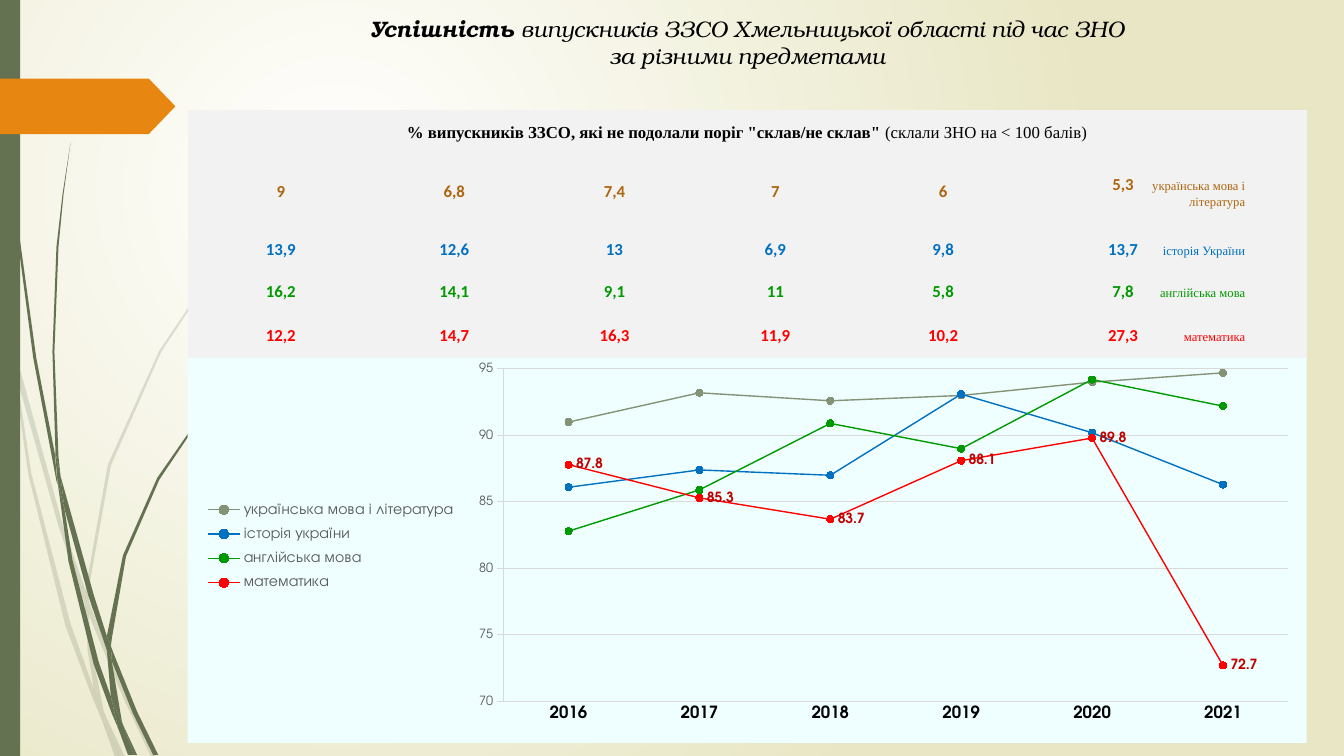
from lxml import etree
from pptx import Presentation
from pptx.chart.data import CategoryChartData
from pptx.dml.color import RGBColor
from pptx.enum.chart import XL_CHART_TYPE, XL_LABEL_POSITION, XL_LEGEND_POSITION, XL_MARKER_STYLE, XL_TICK_MARK
from pptx.enum.shapes import MSO_SHAPE
from pptx.enum.text import MSO_ANCHOR, PP_ALIGN
from pptx.oxml import parse_xml
from pptx.oxml.ns import nsdecls, qn
from pptx.util import Pt

PX = 9144
CENTER, LEFT = PP_ALIGN.CENTER, PP_ALIGN.LEFT
MIDDLE = MSO_ANCHOR.MIDDLE
RECT, ARROW = MSO_SHAPE.RECTANGLE, MSO_SHAPE.PENTAGON
DOT = XL_MARKER_STYLE.CIRCLE
HEX = {
    "white": "FFFFFF", "sand": "E8E6C4", "moss": "647252", "orange": "E78712",
    "black": "000000", "panel": "F2F2F2", "ice": "EFFFFF", "grid": "D9D9D9",
    "gray": "595959", "brown": "AD650E", "sage": "849276", "blue": "0070C0",
    "green": "009900", "red": "FF0000", "dark": "C00000",
}
SERIF, SANS, TITLE, BODY = "Times New Roman", "Calibri", "TeX Gyre Bonum", "TeX Gyre Adventor"


def style(font, color, size, name, bold=False):
    font.color.rgb = RGBColor.from_string(HEX[color])
    font.size, font.name, font.bold = Pt(size), name, bold


def place(owner, left, top, wide, high, inner=False):
    for old in owner.findall(qn("c:layout")):
        owner.remove(old)
    layout = etree.Element(qn("c:layout"))
    spot = owner.find(qn("c:legendPos"))
    if spot is None:
        owner.insert(0, layout)
    else:
        spot.addnext(layout)
    box = etree.SubElement(layout, qn("c:manualLayout"))
    if inner:
        etree.SubElement(box, qn("c:layoutTarget"), val="inner")
    for tag, val in (("xMode", "edge"), ("yMode", "edge"), ("x", left / 1110), ("y", top / 382),
                     ("w", wide / 1110), ("h", high / 382)):
        etree.SubElement(box, qn("c:" + tag), val=str(val))


deck = Presentation()
deck.slide_width, deck.slide_height = 1333 * PX, 750 * PX
slide = deck.slides.add_slide(deck.slide_layouts[6])
shapes = slide.shapes

back = slide.background.fill
back.gradient()
for stop, color in zip(back.gradient_stops, ("white", "sand")):
    stop.color.rgb = RGBColor.from_string(HEX[color])
grad = slide.element.find(".//" + qn("a:gradFill"))
grad.replace(grad.find(qn("a:lin")), parse_xml(
    f'<a:path {nsdecls("a")} path="circle">'
    '<a:fillToRect l="50000" t="50000" r="100000" b="100000"/></a:path>'))

pale = [
    [(11, 350), (9, 322), (0, 282), (0, 299), (10, 344)],
    [(58, 522), (84, 599), (85, 586), (62, 520), (14, 345), (17, 376)],
    [(92, 607), (88, 596), (88, 610), (123, 694), (150, 751), (155, 751), (127, 692)],
    [(119, 751), (124, 751), (105, 711)],
    [(93, 683), (70, 619), (31, 469), (17, 376), (11, 350), (28, 470), (65, 621), (92, 693), (101, 714), (99, 707)],
    [(84, 599), (87, 646), (93, 683), (96, 692), (105, 711), (103, 706), (91, 646), (88, 610), (88, 608)],
    [(88, 584), (110, 462), (160, 349), (229, 245), (268, 198), (290, 175), (312, 154), (312, 153), (289, 175),
     (268, 197), (228, 244), (158, 348), (107, 461), (85, 584), (85, 586), (88, 596)],
    [(101, 714), (114, 751), (119, 751)],
    [(88, 608), (88, 610), (88, 596), (85, 586), (84, 599)],
    [(96, 692), (93, 683), (99, 707), (101, 714), (119, 751), (105, 711)],
]
deep = [
    [(7, 110), (17, 233), (33, 355), (56, 477), (57, 481), (55, 457), (55, 453), (36, 355), (19, 232), (8, 109),
     (5, 48), (4, 0), (3, 0), (4, 48)],
    [(88, 592), (106, 645), (106, 633), (106, 631), (93, 590), (60, 472), (64, 505)],
    [(113, 649), (110, 641), (111, 656), (132, 708), (152, 749), (157, 749), (136, 706)],
    [(110, 691), (98, 657), (72, 556), (64, 505), (57, 477), (68, 557), (93, 659), (111, 708), (117, 722), (116, 717)],
    [(60, 472), (58, 453), (54, 349), (58, 245), (63, 193), (70, 141), (62, 193), (56, 245), (52, 349), (55, 449)],
    [(133, 749), (136, 749), (122, 719)],
    [(57, 477), (64, 505), (60, 472), (55, 449), (55, 453)],
    [(111, 633), (125, 552), (158, 476), (205, 406), (231, 374), (245, 359), (261, 344), (260, 344), (245, 358),
     (231, 373), (204, 405), (156, 474), (122, 551), (106, 631), (110, 641)],
    [(117, 722), (127, 749), (131, 749)],
    [(106, 645), (110, 691), (116, 706), (122, 719), (121, 716), (111, 656), (109, 651)],
    [(106, 645), (109, 651), (111, 656), (110, 641), (106, 631), (106, 633)],
    [(116, 706), (110, 691), (116, 717), (117, 722), (130, 749), (133, 749), (122, 719)],
]
forms = []
for alpha, stems in ((20, pale), (100, deep)):
    for pts in stems:
        pen = shapes.build_freeform(*pts[0], scale=PX)
        pen.add_line_segments(pts[1:], close=True)
        forms.append((pen.convert_to_shape(), "moss", alpha))
bar = shapes.add_shape(RECT, 0, 0, 20 * PX, 750 * PX)
arrow = shapes.add_shape(ARROW, 0, 78 * PX, 174 * PX, 55 * PX)
arrow.adjustments[0] = 0.48
forms += [(bar, "moss", 100), (arrow, "orange", 100)]
for form, color, alpha in forms:
    form.shadow.inherit = False
    form.line.fill.background()
    form.fill.solid()
    form.fill.fore_color.rgb = RGBColor.from_string(HEX[color])
    if alpha < 100:
        tint = form.element.spPr.find(".//" + qn("a:srgbClr"))
        etree.SubElement(tint, qn("a:alpha"), val=str(alpha * 1000))

frame = shapes.add_textbox(186 * PX, 10 * PX, 1110 * PX, 64 * PX).text_frame
frame.word_wrap = True
head, tail = frame.paragraphs[0], frame.add_paragraph()
head.add_run().text = "Успішність"
head.add_run().text = " випускників ЗЗСО Хмельницької області під час ЗНО"
tail.text = "за різними предметами"
for par in (head, tail):
    par.alignment = CENTER
    style(par.font, "black", 16, TITLE)
    par.font.italic = True
head.runs[0].font.bold = True

rows = [
    ("brown", ["9", "6,8", "7,4", "7", "6", "5,3"], ["українська мова і", "література"]),
    ("blue", ["13,9", "12,6", "13", "6,9", "9,8", "13,7"], ["історія України"]),
    ("green", ["16,2", "14,1", "9,1", "11", "5,8", "7,8"], ["англійська мова"]),
    ("red", ["12,2", "14,7", "16,3", "11,9", "10,2", "27,3"], ["математика"]),
]
table = shapes.add_table(5, 6, 186 * PX, 109 * PX, 1110 * PX, 246 * PX).table
table.first_row = table.horz_banding = False
table._tbl.tblPr.find(qn("a:tableStyleId")).text = "{2D5ABB26-0587-4C30-8999-92F81FD0307C}"
for col, width in zip(table.columns, (185, 159, 159, 160, 173, 274)):
    col.width = width * PX
for row, height in zip(table.rows, (44, 74, 40, 44, 44)):
    row.height = height * PX
for cell in table.iter_cells():
    cell.fill.solid()
    cell.fill.fore_color.rgb = RGBColor.from_string(HEX["panel"])
    cell.vertical_anchor = MIDDLE
    cell.margin_left = cell.margin_right = cell.margin_top = PX
    cell.margin_bottom = 0

table.cell(0, 0).merge(table.cell(0, 5))
par = table.cell(0, 0).text_frame.paragraphs[0]
par.alignment = CENTER
style(par.font, "black", 12, SERIF)
par.add_run().text = '% випускників ЗЗСО, які не подолали поріг "склав/не склав" '
par.add_run().text = "(склали ЗНО на ˂ 100 балів)"
par.runs[0].font.bold = True

for r, (color, vals, names) in enumerate(rows, 1):
    for c, val in enumerate(vals[:5]):
        par = table.cell(r, c).text_frame.paragraphs[0]
        par.text, par.alignment = val, CENTER
        style(par.font, color, 12, SANS, True)
    frame = table.cell(r, 5).text_frame
    for i, name in enumerate(names):
        par = frame.add_paragraph() if i else frame.paragraphs[0]
        par.alignment = LEFT
        if i == 0:
            run = par.add_run()
            run.text = "\t" + vals[5]
            style(run.font, color, 12, SANS, True)
        run = par.add_run()
        run.text = "\t\t" + name if i else "\t" + name
        style(run.font, color, 9, SERIF)
        tabs = etree.SubElement(par._p.get_or_add_pPr(), qn("a:tabLst"))
        for spot, side in ((91, "ctr"), (212, "r")):
            etree.SubElement(tabs, qn("a:tab"), pos=str(spot * PX), algn=side)

lines = [
    ("українська мова і література", "sage", (91, 93.2, 92.6, 93, 94, 94.7)),
    ("історія україни", "blue", (86.1, 87.4, 87, 93.1, 90.2, 86.3)),
    ("англійська мова", "green", (82.8, 85.9, 90.9, 89, 94.2, 92.2)),
    ("математика", "red", (87.8, 85.3, 83.7, 88.1, 89.8, 72.7)),
]
data = CategoryChartData()
data.categories = [str(year) for year in range(2016, 2022)]
for name, color, vals in lines:
    data.add_series(name, vals)
chart = shapes.add_chart(XL_CHART_TYPE.LINE_MARKERS, 186 * PX, 355 * PX, 1110 * PX, 382 * PX, data).chart
chart.has_title = False
style(chart.font, "black", 10, BODY)
chart.has_legend = True
chart.legend.position = XL_LEGEND_POSITION.LEFT
chart.legend.include_in_layout = False
style(chart.legend.font, "gray", 11, BODY)

years, marks = chart.category_axis, chart.value_axis
style(years.tick_labels.font, "black", 12, BODY, True)
style(marks.tick_labels.font, "gray", 9, BODY)
years.major_tick_mark = XL_TICK_MARK.NONE
marks.major_tick_mark = XL_TICK_MARK.OUTSIDE
marks.minimum_scale, marks.maximum_scale, marks.major_unit = 70, 95, 5
for part in (years, marks, marks.major_gridlines):
    part.format.line.color.rgb = RGBColor.from_string(HEX["grid"])
    part.format.line.width = Pt(0.75)

for line, (name, color, vals) in zip(chart.plots[0].series, lines):
    tone = RGBColor.from_string(HEX[color])
    line.smooth = False
    line.marker.style, line.marker.size = DOT, 5
    line.marker.format.fill.solid()
    line.marker.format.fill.fore_color.rgb = tone
    for edge in (line.format.line, line.marker.format.line):
        edge.color.rgb = tone
        edge.width = Pt(1)
labels = line.data_labels
labels.show_value = True
labels.position = XL_LABEL_POSITION.RIGHT
style(labels.font, "dark", 10, BODY, True)

space = chart.element
space.find(qn("c:chart")).addnext(parse_xml(
    f'<c:spPr {nsdecls("c", "a")}><a:solidFill><a:srgbClr val="{HEX["ice"]}"/></a:solidFill>'
    '<a:ln><a:noFill/></a:ln></c:spPr>'))
place(space.find(".//" + qn("c:plotArea")), 313, 11, 779, 330, True)
place(space.find(".//" + qn("c:legend")), 13, 134, 258, 106)

deck.save("out.pptx")
